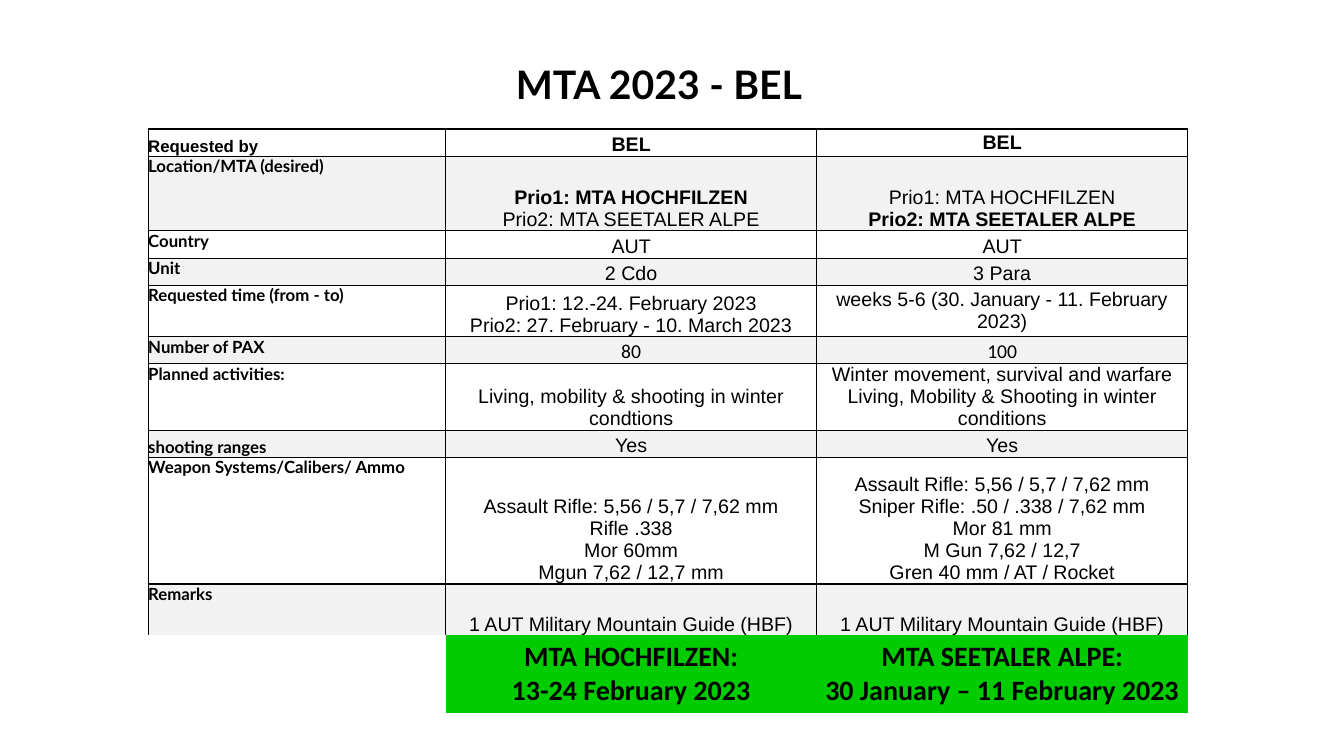
from copy import deepcopy
from lxml import etree
from pptx import Presentation
from pptx.dml.color import RGBColor
from pptx.enum.text import MSO_ANCHOR, PP_ALIGN
from pptx.oxml.ns import qn
from pptx.util import Inches, Pt

TOP, MID, LOW = MSO_ANCHOR.TOP, MSO_ANCHOR.MIDDLE, MSO_ANCHOR.BOTTOM
LEFT, CENTER = PP_ALIGN.LEFT, PP_ALIGN.CENTER
BLACK, GREY, WHITE, GREEN = "000000", "F2F2F2", "FFFFFF", "00CC00"

# Content: label, first request, second request; * marks a bold line
TITLE = "MTA 2023 - BEL"
ROWS = [
    ("Requested by", "*BEL", "*BEL"),
    ("Location/MTA (desired)",
     "*Prio1: MTA HOCHFILZEN\nPrio2: MTA SEETALER ALPE",
     "Prio1: MTA HOCHFILZEN\n*Prio2: MTA SEETALER ALPE"),
    ("Country", "AUT", "AUT"),
    ("Unit", "2 Cdo", "3 Para"),
    ("Requested time (from - to)",
     "Prio1: 12.-24. February 2023\nPrio2: 27. February - 10. March 2023",
     "weeks 5-6 (30. January - 11. February 2023)"),
    ("Number of PAX", "80", "100"),
    ("Planned activities:",
     "Living, mobility & shooting in winter condtions",
     "Winter movement, survival and warfare\n"
     "Living, Mobility & Shooting in winter conditions"),
    ("shooting ranges", "Yes", "Yes"),
    ("Weapon Systems/Calibers/ Ammo",
     "Assault Rifle: 5,56 / 5,7 / 7,62 mm\nRifle .338\nMor 60mm\n"
     "Mgun 7,62 / 12,7 mm",
     "Assault Rifle: 5,56 / 5,7 / 7,62 mm\n"
     "Sniper Rifle: .50 / .338 / 7,62 mm\nMor 81 mm\n"
     "M Gun 7,62 / 12,7\nGren 40 mm / AT / Rocket"),
    ("Remarks", "1 AUT Military Mountain Guide (HBF)",
     "1 AUT Military Mountain Guide (HBF)"),
]
RESULT = [("MTA HOCHFILZEN:", "13-24 February 2023"),
          ("MTA SEETALER ALPE:", "30 January – 11 February 2023")]
WIDTHS = [2.95, 3.68, 3.68]
HEIGHTS = [0.27, 0.74, 0.27, 0.27, 0.51, 0.27, 0.62, 0.27, 1.26, 0.51, 0.77]
LOW_LABELS = {0, 7}
MID_CELLS = {(0, 2), (4, 2), (6, 2)}
THICK_TOP = {0, 1, 9}


def color(code):
    return RGBColor.from_string(code)


def write(para, text, size, font="Arial", bold=False, align=CENTER):
    para.alignment = align
    for i, line in enumerate(text.split("\n")):
        if i:
            para.add_line_break()
            para._p[-1].append(deepcopy(run._r.rPr))
        run = para.add_run()
        run.text = line.lstrip("*")
        run.font.size = Pt(size)
        run.font.name = font
        run.font.bold = bold or line.startswith("*")
        run.font.color.rgb = color(BLACK)


def border(cell, **sides):
    """Set the cell's L, R, T and B lines in points; 0 hides a line."""
    props = cell._tc.get_or_add_tcPr()
    for spot, side in enumerate("LRTB"):
        width = sides[side]
        line = etree.Element(qn("a:ln" + side), w=str(Pt(width)))
        if width:
            fill = etree.SubElement(line, qn("a:solidFill"))
            etree.SubElement(fill, qn("a:srgbClr"), val=BLACK)
        else:
            etree.SubElement(line, qn("a:noFill"))
        props.insert(spot, line)


def paint(cell, code, anchor):
    cell.margin_left = cell.margin_right = 0
    cell.margin_top = cell.margin_bottom = 0
    cell.vertical_anchor = anchor
    if code:
        cell.fill.solid()
        cell.fill.fore_color.rgb = color(code)
    else:
        cell.fill.background()


# Slide and title
deck = Presentation()
deck.slide_width, deck.slide_height = Inches(13.33), Inches(7.5)
slide = deck.slides.add_slide(deck.slide_layouts[5])
title = slide.shapes.title
title.left, title.top = Inches(1.68), Inches(0.44)
title.width, title.height = Inches(9.71), Inches(0.79)
title.text_frame.vertical_anchor = MID
write(title.text_frame.paragraphs[0], TITLE, 28, "Lato", True)

# Table grid
table = slide.shapes.add_table(
    len(HEIGHTS), len(WIDTHS), Inches(1.47), Inches(1.28),
    Inches(sum(WIDTHS)), Inches(sum(HEIGHTS))).table
table.first_row = table.horz_banding = False
for col, width in zip(table.columns, WIDTHS):
    col.width = Inches(width)
for row, height in zip(table.rows, HEIGHTS):
    row.height = Inches(height)

# Request rows
last = len(ROWS)
for r, row in enumerate(ROWS):
    for c, text in enumerate(row):
        cell = table.cell(r, c)
        para = cell.text_frame.paragraphs[0]
        if c == 0:
            anchor = LOW if r in LOW_LABELS else TOP
            font = "Lato" if r else "Arial"
            write(para, text, 12, font, True, LEFT)
        else:
            anchor = MID if (r, c) in MID_CELLS else LOW
            font = "Calibri" if row[0] == "Number of PAX" else "Arial"
            write(para, text, 14, font)
        paint(cell, GREY if r % 2 else WHITE, anchor)
        base = 0 if r == last - 1 else 1 if r + 1 in THICK_TOP else 0.5
        border(cell, L=1, R=1, T=1 if r in THICK_TOP else 0.5, B=base)

# Result row
for c in range(len(WIDTHS)):
    cell = table.cell(last, c)
    paint(cell, GREEN if c else None, MID)
    border(cell, L=0, R=0, T=0, B=0)
    if c:
        place, dates = RESULT[c - 1]
        frame = cell.text_frame
        write(frame.paragraphs[0], place, 20, "Calibri", True)
        write(frame.add_paragraph(), dates, 20, "Calibri", True)

deck.save("out.pptx")
